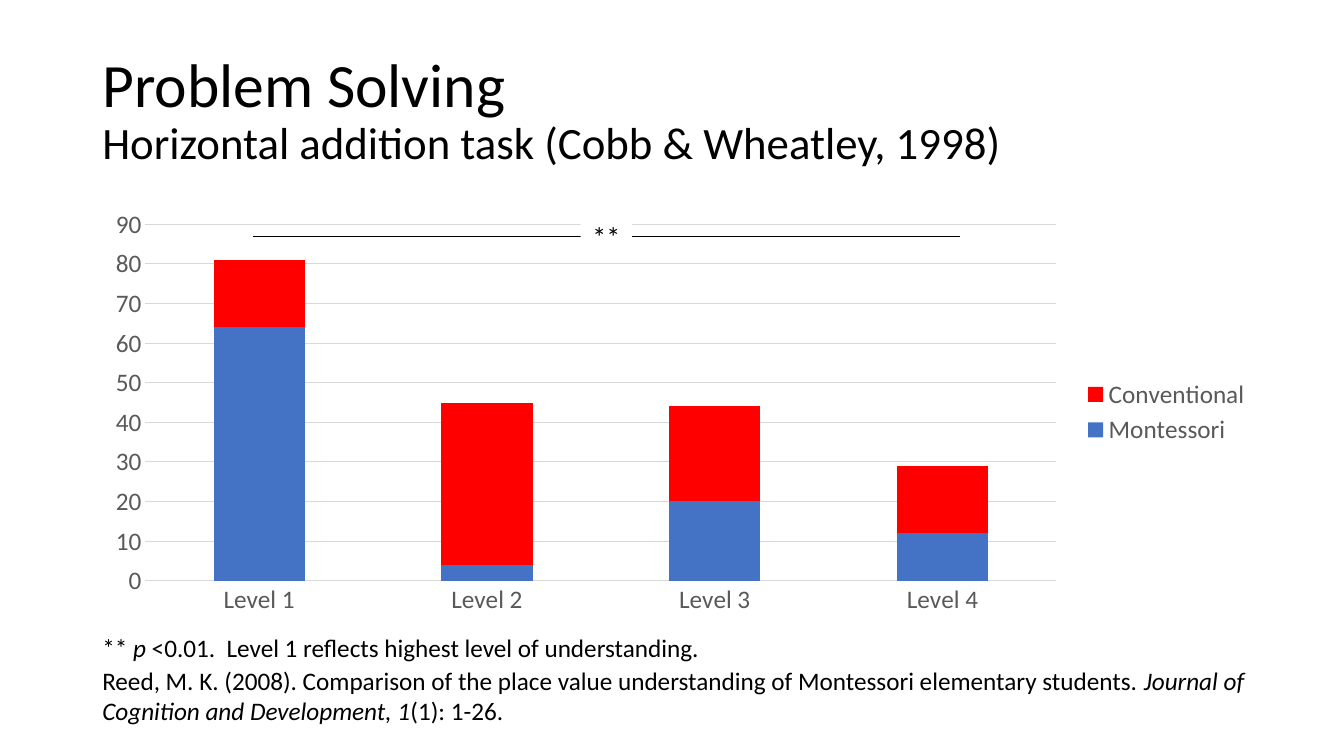
from lxml import etree
from pptx import Presentation
from pptx import util as u
from pptx.chart import data
from pptx.dml import color
from pptx.enum import chart as ch, shapes, text
from pptx.oxml import ns

PX = 9525
FONT = "Calibri"
BLACK, WHITE, GREY, GRID = "000000", "FFFFFF", "595959", "D9D9D9"
LEVELS = ["Level 1", "Level 2", "Level 3", "Level 4"]
SCORES = [
    ("Montessori", "4472C4", [64, 4, 20, 12]),
    ("Conventional", "FF0000", [17, 41, 24, 17]),
]


def px(*sizes):
    return [u.Emu(size * PX) for size in sizes]


def rgb(code):
    return color.RGBColor.from_string(code)


def style(font, size, code=BLACK, italic=None):
    font.name, font.size, font.italic = FONT, u.Pt(size), italic
    font.color.rgb = rgb(code)


def stroke(line, code, width):
    line.color.rgb = rgb(code)
    line.width = u.Pt(width)


def write(frame, *runs, size=18, align=text.PP_ALIGN.LEFT, wrap=True,
          anchor=text.MSO_ANCHOR.TOP, spacing=None):
    """Fill a frame with (text, format) runs; the format may set size, italic or new line."""
    frame.word_wrap, frame.vertical_anchor = wrap, anchor
    para = frame.paragraphs[0]
    para.alignment, para.line_spacing = align, spacing
    for words, form in runs:
        if form.get("newline"):
            para.add_line_break()
        run = para.add_run()
        run.text = words
        style(run.font, form.get("size", size), italic=form.get("italic"))


def add_title(slide, box):
    write(slide.shapes.add_textbox(*px(*box)).text_frame,
          ("Problem Solving", {}),
          ("Horizontal addition task (Cobb & Wheatley, 1998)",
           {"size": 32, "newline": True}),
          size=44, anchor=text.MSO_ANCHOR.MIDDLE, spacing=0.9)


def add_bars(slide, box):
    table = data.CategoryChartData()
    table.categories = LEVELS
    for name, _, values in SCORES:
        table.add_series(name, values)
    chart = slide.shapes.add_chart(
        ch.XL_CHART_TYPE.COLUMN_STACKED, *px(*box), table).chart
    style(chart.font, 18, GREY)
    chart.has_title = False
    chart.has_legend = True
    chart.legend.position = ch.XL_LEGEND_POSITION.RIGHT
    chart.legend.include_in_layout = False
    style(chart.legend.font, 18, GREY)

    plot = chart.plots[0]
    plot.gap_width, plot.overlap, plot.vary_by_categories = 150, 100, False
    for series, (_, code, _) in zip(plot.series, SCORES):
        series.format.fill.solid()
        series.format.fill.fore_color.rgb = rgb(code)
        series.invert_if_negative = False

    cats, vals = chart.category_axis, chart.value_axis
    for axis in (cats, vals):
        axis.major_tick_mark = axis.minor_tick_mark = ch.XL_TICK_MARK.NONE
        style(axis.tick_labels.font, 18, GREY)
    stroke(cats.format.line, GRID, 0.75)
    vals.format.line.fill.background()
    vals.minimum_scale, vals.maximum_scale, vals.major_unit = 0, 90, 10
    vals.has_major_gridlines = True
    stroke(vals.major_gridlines.format.line, GRID, 0.75)


def add_mark(slide, box):
    """Draw the significance line through the box's middle, with its stars."""
    left, top, width, height = box
    middle = top + height // 2
    line = slide.shapes.add_connector(
        shapes.MSO_CONNECTOR.STRAIGHT, *px(left, middle, left + width, middle))
    stroke(line.line, BLACK, 0.5)
    etree.SubElement(line.element.spPr, ns.qn("a:effectLst"))

    stars = slide.shapes.add_shape(
        shapes.MSO_SHAPE.RECTANGLE, *px(left + 312, top, 49, height))
    stars.shadow.inherit = False
    stars.fill.solid()
    stars.fill.fore_color.rgb = rgb(WHITE)
    stars.line.fill.background()
    write(stars.text_frame, ("**", {}), size=20, align=text.PP_ALIGN.CENTER)


def add_notes(slide, box):
    left, top, width, height = box
    note = slide.shapes.add_textbox(*px(left, top, 601, 38))
    write(note.text_frame, ("**", {}), (" p", {"italic": True}),
          (" <0.01.  Level 1 reflects highest level of understanding.", {}),
          wrap=False)
    source = slide.shapes.add_textbox(*px(left, top + 32, width, height - 32))
    write(source.text_frame,
          ("Reed, M. K. (2008). Comparison of the place value understanding "
           "of Montessori elementary students. ", {}),
          ("Journal of Cognition and Development, 1", {"italic": True}),
          ("(1): 1-26.", {}))


def main():
    deck = Presentation()
    deck.slide_width, deck.slide_height = px(1280, 720)
    slide = deck.slides.add_slide(deck.slide_layouts[6])
    add_title(slide, (88, 37, 1104, 139))
    add_bars(slide, (88, 191, 1113, 403))
    add_notes(slide, (88, 597, 1113, 100))
    add_mark(slide, (241, 204, 673, 42))
    deck.save("out.pptx")


if __name__ == "__main__":
    main()
